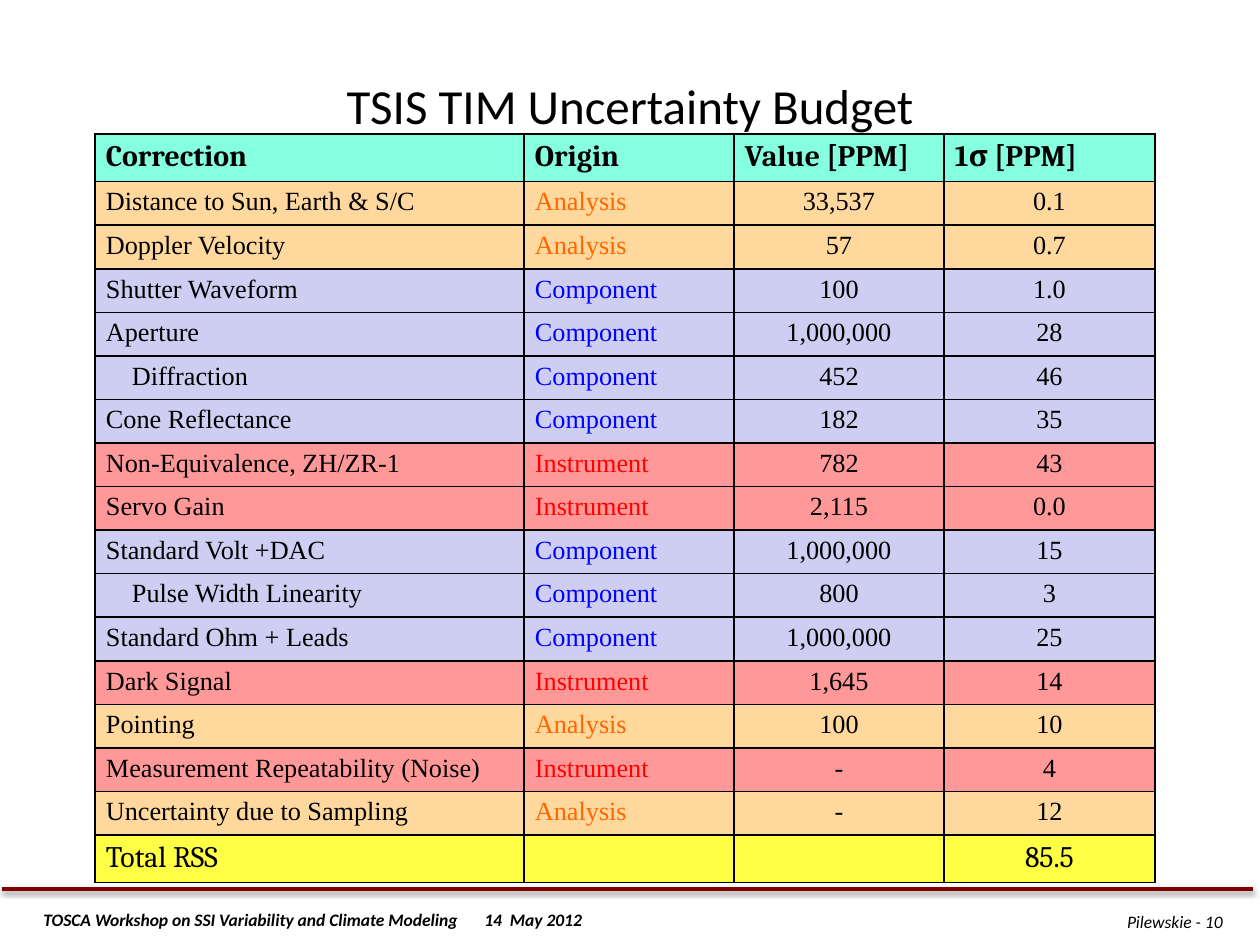
from lxml.etree import SubElement
from pptx import Presentation
from pptx.dml.color import RGBColor
from pptx.enum.shapes import MSO_CONNECTOR
from pptx.enum.text import MSO_ANCHOR, PP_ALIGN
from pptx.oxml import parse_xml
from pptx.oxml.ns import nsdecls, qn
from pptx.util import Emu, Pt

# Content
TITLE = "TSIS TIM Uncertainty Budget"
HEADINGS = ("Correction", "Origin", "Value [PPM]", "1σ [PPM]")
CORRECTIONS = [
    ("Distance to Sun, Earth & S/C", "Analysis", "33,537", "0.1"),
    ("Doppler Velocity", "Analysis", "57", "0.7"),
    ("Shutter Waveform", "Component", "100", "1.0"),
    ("Aperture", "Component", "1,000,000", "28"),
    ("Diffraction", "Component", "452", "46"),
    ("Cone Reflectance", "Component", "182", "35"),
    ("Non-Equivalence, ZH/ZR-1", "Instrument", "782", "43"),
    ("Servo Gain", "Instrument", "2,115", "0.0"),
    ("Standard Volt +DAC", "Component", "1,000,000", "15"),
    ("Pulse Width Linearity", "Component", "800", "3"),
    ("Standard Ohm + Leads", "Component", "1,000,000", "25"),
    ("Dark Signal", "Instrument", "1,645", "14"),
    ("Pointing", "Analysis", "100", "10"),
    ("Measurement Repeatability (Noise)", "Instrument", "-", "4"),
    ("Uncertainty due to Sampling", "Analysis", "-", "12"),
]
TOTAL = ("Total RSS", "", "", "85.5")
SUB_CORRECTIONS = {"Diffraction", "Pulse Width Linearity"}
FOOTER = "TOSCA Workshop on SSI Variability and Climate Modeling\t14  May 2012"
PAGE = "Pilewskie - 10"

COLORS = {
    "text": "000000", "rule": "800000", "heading": "85FFE0", "total": "FFFF00",
    "Analysis": "FF6600", "Component": "0000FF", "Instrument": "FF0000",
}
# Row fill and its opacity in percent
ROW_FILLS = {
    "Analysis": ("FF9900", 38),
    "Component": ("8585E0", 40),
    "Instrument": ("FF0000", 40),
}

# Layout in px
PX_PER_INCH = 126
SLIDE = (1260, 945)
TITLE_BOX = (63, 63, 1134, 84)
TABLE_LEFT, TABLE_TOP = 95, 134
COLUMNS = (429, 210, 210, 211)
END_ROW, BODY_HEIGHT = 47, 654
CELL_MARGINS = (11, 6, 11, 6)
SUB_INDENT = 26
RULE = (2, 889, 1253, 889)
FOOTER_BOX = (31, 903, 1030, 34)
PAGE_BOX = (935, 905, 300, 32)


def px(length):
    return Emu(round(length * 914400 / PX_PER_INCH))


def style(paragraph, font_name, size, color="text", bold=False, italic=False,
          align=PP_ALIGN.LEFT):
    paragraph.alignment = align
    font = paragraph.font
    font.name, font.size, font.bold, font.italic = font_name, Pt(size), bold, italic
    font.color.rgb = RGBColor.from_string(COLORS[color])


def fill_cell(cell, color, opacity):
    cell.fill.solid()
    cell.fill.fore_color.rgb = RGBColor.from_string(color)
    properties = cell._tc.get_or_add_tcPr()
    if opacity < 100:
        tint = properties.find(".//" + qn("a:srgbClr"))
        SubElement(tint, qn("a:alpha"), val=str(opacity * 1000))
    for position, side in enumerate("LRTB"):
        properties.insert(position, parse_xml(
            f'<a:ln{side} {nsdecls("a")} w="12700"><a:solidFill>'
            f'<a:srgbClr val="{COLORS["text"]}"/></a:solidFill></a:ln{side}>'))


def write_cell(cell, text, **look):
    (cell.margin_left, cell.margin_top,
     cell.margin_right, cell.margin_bottom) = map(px, CELL_MARGINS)
    cell.text = text
    paragraph = cell.text_frame.paragraphs[0]
    style(paragraph, **look)
    if not text:
        SubElement(paragraph._p, qn("a:endParaRPr"), sz=str(look["size"] * 100))
    if text in SUB_CORRECTIONS:
        paragraph._p.get_or_add_pPr().set("marL", str(px(SUB_INDENT)))


def add_budget(slide):
    rows = [HEADINGS, *CORRECTIONS, TOTAL]
    heights = [END_ROW, *[BODY_HEIGHT / len(CORRECTIONS)] * len(CORRECTIONS), END_ROW]
    budget = slide.shapes.add_table(
        len(rows), len(COLUMNS), px(TABLE_LEFT), px(TABLE_TOP),
        px(sum(COLUMNS)), px(sum(heights))).table
    for column, width in zip(budget.columns, COLUMNS):
        column.width = px(width)
    for r, (entries, height) in enumerate(zip(rows, heights)):
        budget.rows[r].height = px(height)
        origin = entries[1]
        for c, entry in enumerate(entries):
            align = PP_ALIGN.CENTER if c > 1 else PP_ALIGN.LEFT
            look = dict(font_name="Cambria", size=17, align=align)
            if entries is HEADINGS:
                color, opacity = COLORS["heading"], 100
                look.update(bold=True, align=PP_ALIGN.LEFT)
            elif entries is TOTAL:
                color, opacity = COLORS["total"], 73
            else:
                color, opacity = ROW_FILLS[origin]
                look.update(font_name="Times New Roman", size=15,
                            color=origin if c == 1 else "text")
            fill_cell(budget.cell(r, c), color, opacity)
            write_cell(budget.cell(r, c), entry, **look)


def add_rule(slide):
    rule = slide.shapes.add_connector(MSO_CONNECTOR.STRAIGHT, *map(px, RULE))
    rule.line.color.rgb = RGBColor.from_string(COLORS["rule"])
    rule.line.width = Pt(2)
    rule._element.spPr.append(parse_xml(
        f'<a:effectLst {nsdecls("a")}><a:outerShdw blurRad="39370" dist="20320" '
        f'dir="5400000" rotWithShape="0"><a:srgbClr val="{COLORS["text"]}">'
        '<a:alpha val="38000"/></a:srgbClr></a:outerShdw></a:effectLst>'))


def add_note(slide, box, text, **look):
    frame = slide.shapes.add_textbox(*map(px, box)).text_frame
    frame.word_wrap = True
    frame.vertical_anchor = MSO_ANCHOR.MIDDLE
    frame.text = text
    style(frame.paragraphs[0], "Calibri", 10, italic=True, **look)


def main():
    deck = Presentation()
    deck.slide_width, deck.slide_height = map(px, SLIDE)
    slide = deck.slides.add_slide(deck.slide_layouts[5])

    # Footer
    add_note(slide, FOOTER_BOX, FOOTER, bold=True)
    add_note(slide, PAGE_BOX, PAGE, align=PP_ALIGN.RIGHT)
    add_rule(slide)

    # Title
    title = slide.shapes.title
    title.left, title.top, title.width, title.height = map(px, TITLE_BOX)
    title.text_frame.text = TITLE
    title.text_frame.vertical_anchor = MSO_ANCHOR.MIDDLE
    style(title.text_frame.paragraphs[0], "Calibri", 28, align=PP_ALIGN.CENTER)

    # Uncertainty budget
    add_budget(slide)
    deck.save("out.pptx")


if __name__ == "__main__":
    main()
